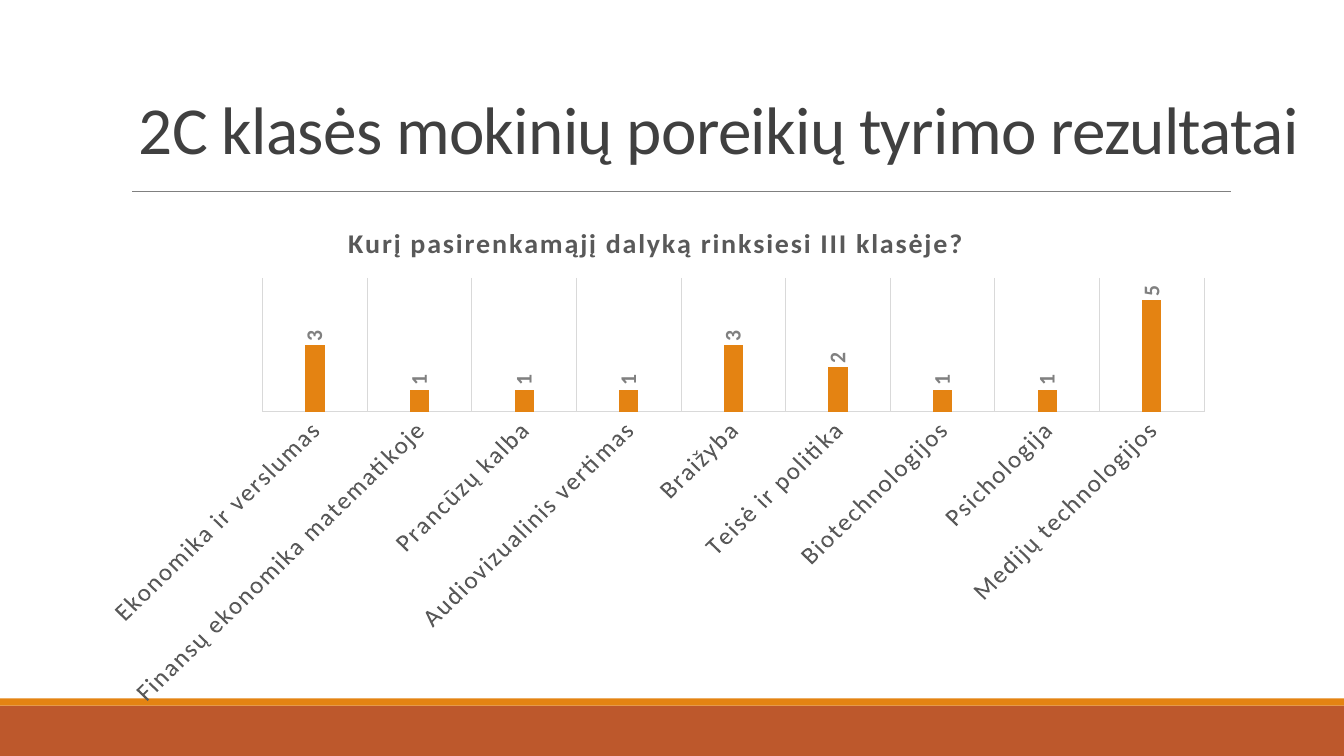
from lxml.etree import SubElement
from pptx import Presentation
from pptx.chart.data import CategoryChartData
from pptx.dml.color import RGBColor
from pptx.enum.chart import XL_CHART_TYPE, XL_LABEL_POSITION, XL_TICK_MARK
from pptx.enum.shapes import MSO_CONNECTOR, MSO_SHAPE
from pptx.enum.text import MSO_ANCHOR, PP_ALIGN
from pptx.oxml.ns import qn
from pptx.util import Inches, Pt

WIDE, HIGH = 13.33, 7.5
FACE = "Calibri"
TITLE = "2C klasės mokinių poreikių tyrimo rezultatai"
ASK = "Kurį pasirenkamąjį dalyką rinksiesi III klasėje?"
VOTES = {
    "Ekonomika ir verslumas": 3,
    "Finansų ekonomika matematikoje": 1,
    "Prancūzų kalba": 1,
    "Audiovizualinis vertimas": 1,
    "Braižyba": 3,
    "Teisė ir politika": 2,
    "Biotechnologijos": 1,
    "Psichologija": 1,
    "Medijų technologijos": 5,
}
# Footer bands: top, height, colour
BANDS = [(7, 0.5, "BD582C"), (6.93, 0.07, "E48312")]
FONTS = {
    "title": {"size": Pt(48), "bold": False, "color": "404040"},
    "ask": {"size": Pt(20), "bold": True, "color": "595959"},
    "names": {"size": Pt(18), "bold": False, "color": "595959"},
    "votes": {"size": Pt(16), "bold": True, "color": "808080"},
}


def tint(hue):
    return RGBColor.from_string(hue)


def style(font, kind, gap=0):
    """Apply a named format; gap is letter spacing in hundredths of a point."""
    font.name = FACE
    for key, val in FONTS[kind].items():
        if key == "color":
            font.color.rgb = tint(val)
        else:
            setattr(font, key, val)
    if gap:
        font._element.set("spc", str(gap))


def rule(line, hue, width):
    line.color.rgb = tint(hue)
    line.width = Pt(width)


def turn(part, angle):
    """Rotate the text of a chart part by whole degrees."""
    body = part._element.find(qn("c:txPr")).find(qn("a:bodyPr"))
    body.set("rot", str(angle * 60000))
    body.set("vert", "horz")


def draw_frame(slide):
    for top, high, hue in BANDS:
        band = slide.shapes.add_shape(
            MSO_SHAPE.RECTANGLE, 0, Inches(top), Inches(WIDE), Inches(high))
        band.shadow.inherit = False
        band.fill.solid()
        band.fill.fore_color.rgb = tint(hue)
        band.line.fill.background()
    line = slide.shapes.add_connector(
        MSO_CONNECTOR.STRAIGHT, *map(Inches, (1.31, 1.9, 12.21, 1.9)))
    rule(line.line, "808080", 0.5)
    SubElement(line._element.spPr, qn("a:effectLst"))


def draw_title(slide):
    box = slide.shapes.add_textbox(*map(Inches, (1.2, 0.13, 11.86, 1.59)))
    frame = box.text_frame
    frame.word_wrap = True
    frame.vertical_anchor = MSO_ANCHOR.BOTTOM
    para = frame.paragraphs[0]
    para.alignment = PP_ALIGN.CENTER
    para.line_spacing = 0.85
    run = para.add_run()
    run.text = TITLE
    style(run.font, "title", -50)


def draw_chart(slide):
    data = CategoryChartData()
    data.categories = list(VOTES)
    data.add_series(ASK, list(VOTES.values()))
    chart = slide.shapes.add_chart(
        XL_CHART_TYPE.COLUMN_CLUSTERED,
        *map(Inches, (0.84, 2.02, 11.33, 4.99)), data).chart
    chart.has_legend = False
    chart.font.name = FACE
    chart.font.size = Pt(10)

    chart.has_title = True
    head = chart.chart_title
    head.include_in_layout = False
    para = head.text_frame.paragraphs[0]
    run = para.add_run()
    run.text = ASK
    style(run.font, "ask", 120)

    axis = chart.category_axis
    axis.major_tick_mark = axis.minor_tick_mark = XL_TICK_MARK.NONE
    axis.has_major_gridlines = True
    for line in (axis.format.line, axis.major_gridlines.format.line):
        rule(line, "D9D9D9", 0.75)
    style(axis.tick_labels.font, "names", 120)
    turn(axis, -45)

    scale = chart.value_axis
    scale.minimum_scale, scale.maximum_scale = 0, 6
    scale.has_major_gridlines = False
    scale.visible = False

    plot = chart.plots[0]
    plot.gap_width, plot.overlap = 444, -90
    plot.vary_by_categories = False
    fill = plot.series[0].format.fill
    fill.solid()
    fill.fore_color.rgb = tint("E48312")
    labels = plot.series[0].data_labels
    labels.show_value = True
    labels.position = XL_LABEL_POSITION.OUTSIDE_END
    style(labels.font, "votes")
    turn(labels, -90)


def main():
    deck = Presentation()
    deck.slide_width, deck.slide_height = Inches(WIDE), Inches(HIGH)
    slide = deck.slides.add_slide(deck.slide_layouts[6])
    draw_frame(slide)
    draw_title(slide)
    draw_chart(slide)
    deck.save("out.pptx")


if __name__ == "__main__":
    main()
